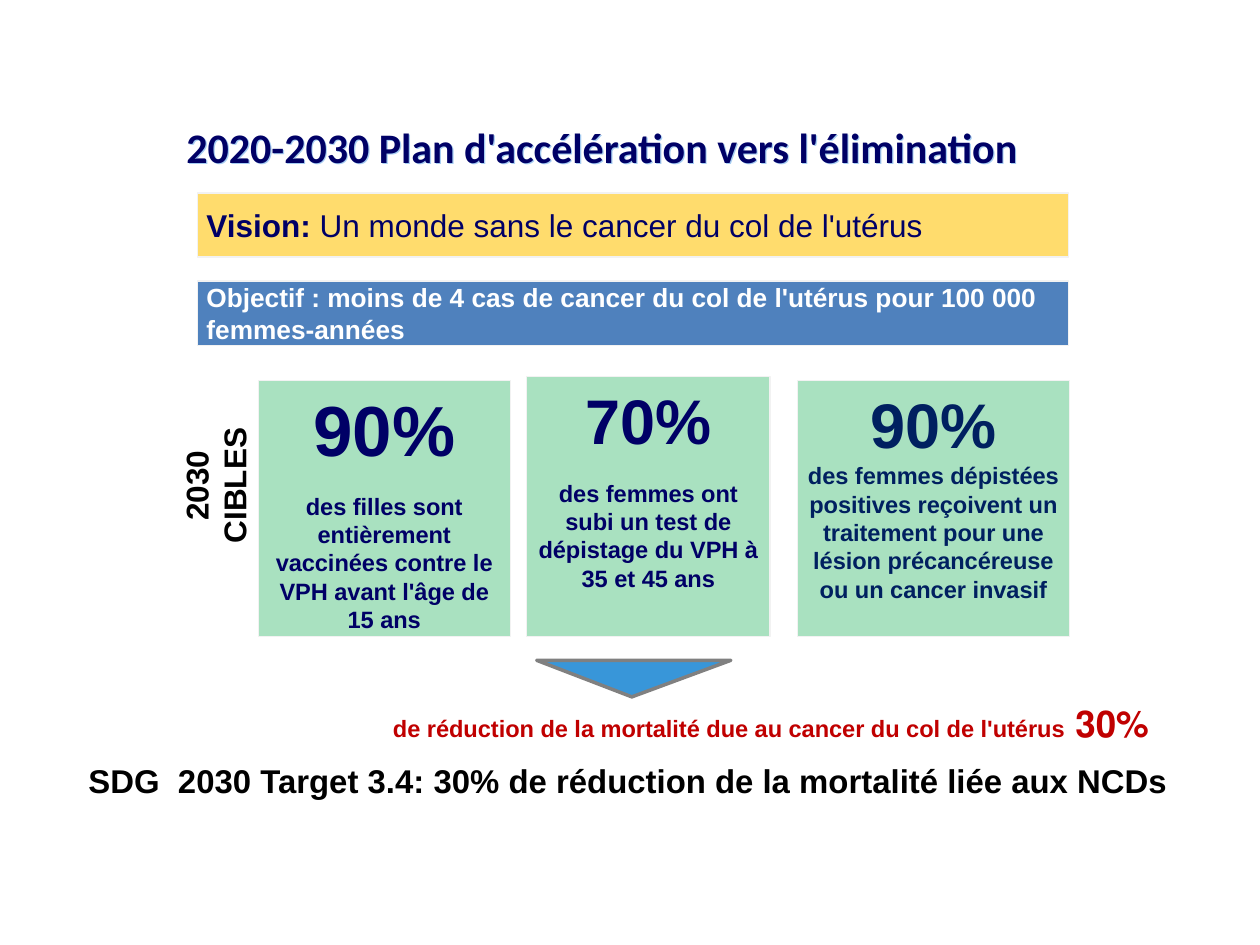
from lxml.etree import SubElement
from pptx import Presentation
from pptx.dml.color import RGBColor
from pptx.enum.shapes import MSO_SHAPE
from pptx.enum.text import MSO_ANCHOR, MSO_AUTO_SIZE, PP_ALIGN
from pptx.oxml.ns import qn
from pptx.util import Pt

NAVY, DEEP, RED, BLACK, WHITE = "000066", "002060", "C00000", "000000", "FFFFFF"
GOLD, BLUE, GREEN, SKY = "FFDC6D", "4F81BD", "A9E1C0", "3896D9"
PALE, GREY, GLOW = "F2F2F2", "808080", "A6CDF2"
SLIM, WIDE = (5, 3), (7.2, 3.6)
LEFT, MID = PP_ALIGN.LEFT, PP_ALIGN.CENTER


def tint(code):
    """Turn a hex string into a colour."""
    return RGBColor.from_string(code)


def setall(item, values):
    """Set each attribute named in a dict."""
    for name, value in values.items():
        setattr(item, name, value)


def place(shape, box):
    """Move and size a shape in points."""
    setall(shape, dict(zip(("left", "top", "width", "height"), map(Pt, box))))


def add_run(para, text, size, code, bold=True, font="Arial"):
    """Add one formatted run to a paragraph."""
    run = para.add_run()
    run.text = text
    setall(run.font, {"size": Pt(size), "bold": bold, "name": font})
    run.font.color.rgb = tint(code)


def set_frame(shape, anchor, pad=SLIM):
    """Set anchor, wrapping and margins, and return the frame."""
    side, edge = map(Pt, pad)
    frame = shape.text_frame
    setall(frame, {
        "word_wrap": True, "auto_size": MSO_AUTO_SIZE.NONE, "vertical_anchor": anchor,
        "margin_left": side, "margin_right": side,
        "margin_top": edge, "margin_bottom": edge,
    })
    return frame


def write_line(shape, runs, align=LEFT, rtl=False, anchor=MSO_ANCHOR.MIDDLE, pad=SLIM):
    """Write one paragraph of runs in a shape."""
    para = set_frame(shape, anchor, pad).paragraphs[0]
    para.alignment = align
    if rtl:
        para._p.get_or_add_pPr().set("rtl", "1")
    for run in runs:
        add_run(para, *run)


def add_title(slide, text, box):
    """Fill the title and give its letters a pale shadow."""
    title = slide.shapes.title
    place(title, box)
    write_line(title, [(text, 24, NAVY, True, "Calibri")], pad=(0, 0))
    title.fill.background()
    glow = SubElement(SubElement(title._element.spPr, qn("a:effectLst")),
                      qn("a:outerShdw"), dist="12700", dir="2700000")
    SubElement(glow, qn("a:srgbClr"), val=GLOW)


def add_form(slide, kind, box, fill, edge=PALE, width=0.75):
    """Add a flat filled shape with an outline."""
    shape = slide.shapes.add_shape(kind, *map(Pt, box))
    shape.shadow.inherit = False
    shape.fill.solid()
    shape.fill.fore_color.rgb = tint(fill)
    shape.line.color.rgb = tint(edge)
    shape.line.width = Pt(width)
    return shape


def add_band(slide, top, fill, runs, rtl=False):
    """Add a full-width band with one line of text."""
    band = add_form(slide, MSO_SHAPE.RECTANGLE, (113, top, 497.5, 36.7), fill)
    write_line(band, runs, rtl=rtl)


def add_card(slide, left, top, width, share, size, code, text, gap):
    """Add a target card with a big share above its text."""
    card = add_form(slide, MSO_SHAPE.RECTANGLE, (left, top, width, 363.6 - top), GREEN)
    frame = set_frame(card, MSO_ANCHOR.TOP)
    head, body = frame.paragraphs[0], frame.add_paragraph()
    for para in (head, body):
        para.alignment = MID
    body.space_before = Pt(gap)
    add_run(head, share, size, code)
    add_run(body, text, 13.5, code)


def add_note(slide, box, runs, turn=0, **style):
    """Add a text box, turned if asked."""
    note = slide.shapes.add_textbox(*map(Pt, box))
    note.rotation = turn
    write_line(note, runs, **style)


def main():
    """Build the slide and save it."""
    deck = Presentation()
    setall(deck, {"slide_width": Pt(720), "slide_height": Pt(540)})
    slide = deck.slides.add_slide(deck.slide_layouts[5])

    add_title(slide, "2020-2030 Plan d'accélération vers l'élimination",
              (106.5, 58.3, 490.3, 51))
    add_note(slide, (219.6, 395.3, 540, 35.3), [
        ("30% ", 21, RED),
        ("de réduction de la mortalité due au cancer du col de l'utérus", 13.5, RED),
    ], rtl=True)
    add_band(slide, 110.2, GOLD, [
        ("Vision: ", 18, NAVY),
        ("Un monde sans le cancer du col de l'utérus", 18, NAVY, False),
    ])
    add_band(slide, 160.6, BLUE, [
        ("Objectif : moins de 4 cas de cancer du col de l'utérus "
         "pour 100 000 femmes-années", 15, WHITE),
    ], rtl=True)

    cards = [
        (147.6, 217.4, 144, "90%", 40.5, NAVY,
         "des filles sont entièrement vaccinées contre le VPH avant l'âge de 15 ans", 12),
        (301, 215.3, 139, "70%", 36, NAVY,
         "des femmes ont subi un test de dépistage du VPH à 35 et 45 ans", 12),
        (455.8, 217.4, 155.2, "90%", 36, DEEP,
         "des femmes dépistées positives reçoivent un traitement pour une "
         "lésion précancéreuse ou un cancer invasif", 0),
    ]
    for card in cards:
        add_card(slide, *card)

    add_note(slide, (74.2, 252, 97.9, 51), [("2030 CIBLES", 18, BLACK)],
             turn=270, align=MID, anchor=MSO_ANCHOR.TOP, pad=WIDE)
    arrow = add_form(slide, MSO_SHAPE.ISOSCELES_TRIANGLE,
                     (306.7, 377.3, 110.9, 20.9), SKY, GREY, 2)
    arrow.rotation = 180
    arrow.adjustments[0] = 0.51
    add_note(slide, (37.4, 431.3, 643.7, 30.2), [
        ("SDG  2030 Target 3.4: 30% de réduction de la mortalité liée aux NCDs",
         18.8, BLACK),
    ], align=MID, anchor=MSO_ANCHOR.TOP, pad=WIDE)
    deck.save("out.pptx")


if __name__ == "__main__":
    main()
